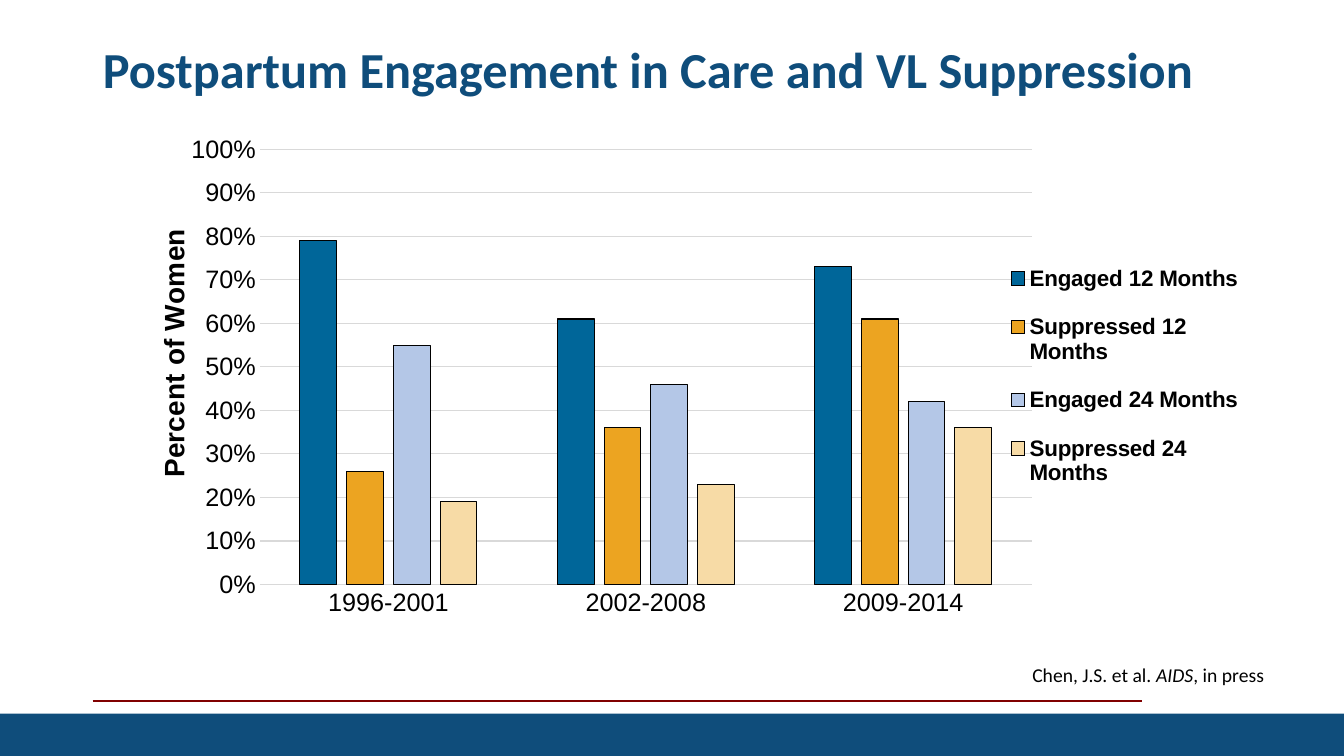
from lxml.etree import SubElement
from pptx import Presentation
from pptx.chart.data import CategoryChartData
from pptx.dml.color import RGBColor
from pptx.enum.chart import XL_CHART_TYPE, XL_LEGEND_POSITION, XL_TICK_MARK
from pptx.enum.shapes import MSO_CONNECTOR, MSO_SHAPE
from pptx.enum.text import MSO_ANCHOR, PP_ALIGN
from pptx.oxml import parse_xml
from pptx.oxml.ns import nsdecls, qn
from pptx.util import Inches, Pt

TITLE = "Postpartum Engagement in Care and VL Suppression"
CITATION = [("Chen, J.S. et al.", False), (" AIDS", True), (", in press", False)]
AXIS_TITLE = "Percent of Women"
PERIODS = ["1996-2001", "2002-2008", "2009-2014"]
SERIES = [
    ("Engaged 12 Months", (0.79, 0.61, 0.73), "engaged_12"),
    ("Suppressed 12 Months", (0.26, 0.36, 0.61), "suppressed_12"),
    ("Engaged 24 Months", (0.55, 0.46, 0.42), "engaged_24"),
    ("Suppressed 24 Months", (0.19, 0.23, 0.36), "suppressed_24"),
]
COLORS = {
    "navy": "0F4D7B", "rule": "800000", "black": "000000", "grid": "D9D9D9",
    "white": "FFFFFF", "engaged_12": "006699", "suppressed_12": "ECA421",
    "engaged_24": "B4C7E7", "suppressed_24": "F7DBA6",
}
WIDTH, HEIGHT = 13.33, 7.5
MARGIN, CONTENT_WIDTH = 0.92, 11.5
BAND_TOP, RULE_TOP, RULE_RIGHT = 7.08, 6.95, 11.33
TITLE_BOX = (MARGIN, 0.26, CONTENT_WIDTH, 0.91)
CHART_BOX = (MARGIN, 1.34, CONTENT_WIDTH, 5.01)
CITATION_BOX = (10.14, 6.53, 3.84, 0.34)
BAND_BOX = (0, BAND_TOP, WIDTH, HEIGHT - BAND_TOP)
PLOT_SHARE = {"x": 0.144, "y": 0.026, "w": 0.666, "h": 0.864}
LEGEND_SHARE = {"x": 0.785, "y": 0.21, "w": 0.21, "h": 0.53}
AXIS_TITLE_SHARE = {"x": 0.05, "y": 0.175}


def color(name):
    return RGBColor.from_string(COLORS[name])


def set_font(font, size, name, color_name="black", **values):
    for key, value in {"size": Pt(size), "name": name, **values}.items():
        setattr(font, key, value)
    font.color.rgb = color(color_name)


def set_line(line, color_name, width=0.75):
    line.color.rgb = color(color_name)
    line.width = Pt(width)


def place(shape, box):
    for key, value in zip(("left", "top", "width", "height"), box):
        setattr(shape, key, Inches(value))


def set_layout(element, index, shares, inner=False):
    for old in element.findall(qn("c:layout")):
        element.remove(old)
    layout = parse_xml(f"<c:layout {nsdecls('c')}><c:manualLayout/></c:layout>")
    element.insert(index, layout)
    if inner:
        SubElement(layout[0], qn("c:layoutTarget")).set("val", "inner")
    for key in ("x", "y"):
        SubElement(layout[0], qn(f"c:{key}Mode")).set("val", "edge")
    for key, value in shares.items():
        SubElement(layout[0], qn(f"c:{key}")).set("val", str(value))


def add_footer(slide):
    rule = slide.shapes.add_connector(
        MSO_CONNECTOR.STRAIGHT, Inches(MARGIN), Inches(RULE_TOP),
        Inches(RULE_RIGHT), Inches(RULE_TOP))
    set_line(rule.line, "rule", 1.5)
    SubElement(rule._element.spPr, qn("a:effectLst"))
    band = slide.shapes.add_shape(MSO_SHAPE.RECTANGLE, *map(Inches, BAND_BOX))
    band.shadow.inherit = False
    band.fill.solid()
    band.fill.fore_color.rgb = color("navy")
    band.line.fill.background()


def add_title(slide):
    title = slide.shapes.title
    place(title, TITLE_BOX)
    title.text_frame.text = TITLE
    title.text_frame.vertical_anchor = MSO_ANCHOR.MIDDLE
    paragraph = title.text_frame.paragraphs[0]
    paragraph.alignment = PP_ALIGN.LEFT
    paragraph.line_spacing = 0.9
    set_font(paragraph.runs[0].font, 36, "Calibri", "navy", bold=True)


def add_engagement_chart(slide):
    data = CategoryChartData(number_format="0%")
    data.categories = PERIODS
    for name, values, _ in SERIES:
        data.add_series(name, values)
    chart = slide.shapes.add_chart(
        XL_CHART_TYPE.COLUMN_CLUSTERED, *map(Inches, CHART_BOX), data).chart
    chart.has_title = False
    set_font(chart.font, 10, "Calibri")
    plot = chart.plots[0]
    for key, value in {"gap_width": 219, "overlap": -27, "vary_by_categories": False}.items():
        setattr(plot, key, value)
    for series, (_, _, fill_name) in zip(plot.series, SERIES):
        series.format.fill.solid()
        series.format.fill.fore_color.rgb = color(fill_name)
        set_line(series.format.line, "black")

    category_axis, value_axis = chart.category_axis, chart.value_axis
    for axis in (category_axis, value_axis):
        axis.major_tick_mark = axis.minor_tick_mark = XL_TICK_MARK.NONE
        set_font(axis.tick_labels.font, 18, "Arial")
    set_line(category_axis.format.line, "grid")
    value_axis.format.line.fill.background()
    set_line(value_axis.major_gridlines.format.line, "grid")
    for key, value in {"minimum_scale": 0, "maximum_scale": 1, "major_unit": 0.1}.items():
        setattr(value_axis, key, value)
    value_axis.tick_labels.number_format = "0%"
    value_axis.tick_labels.number_format_is_linked = False
    axis_frame = value_axis.axis_title.text_frame
    axis_frame.text = AXIS_TITLE
    axis_frame._txBody.bodyPr.set("rot", "-5400000")
    set_font(axis_frame.paragraphs[0].runs[0].font, 20, "Arial", bold=True)

    chart.has_legend = True
    chart.legend.position = XL_LEGEND_POSITION.RIGHT
    chart.legend.include_in_layout = False
    set_font(chart.legend.font, 16, "Arial", bold=True)
    set_layout(chart._chartSpace.chart.plotArea, 0, PLOT_SHARE, inner=True)
    set_layout(chart.legend._element, 1, LEGEND_SHARE)
    set_layout(value_axis.axis_title._element, 1, AXIS_TITLE_SHARE)


def add_citation(slide):
    box = slide.shapes.add_textbox(*map(Inches, CITATION_BOX))
    box.text_frame.word_wrap = True
    for text, italic in CITATION:
        run = box.text_frame.paragraphs[0].add_run()
        run.text = text
        set_font(run.font, 14, "Calibri", italic=italic)


def main():
    presentation = Presentation()
    presentation.slide_width = Inches(WIDTH)
    presentation.slide_height = Inches(HEIGHT)
    slide = presentation.slides.add_slide(presentation.slide_layouts[5])
    slide.background.fill.solid()
    slide.background.fill.fore_color.rgb = color("white")
    add_footer(slide)
    add_title(slide)
    add_engagement_chart(slide)
    add_citation(slide)
    presentation.save("out.pptx")


if __name__ == "__main__":
    main()
